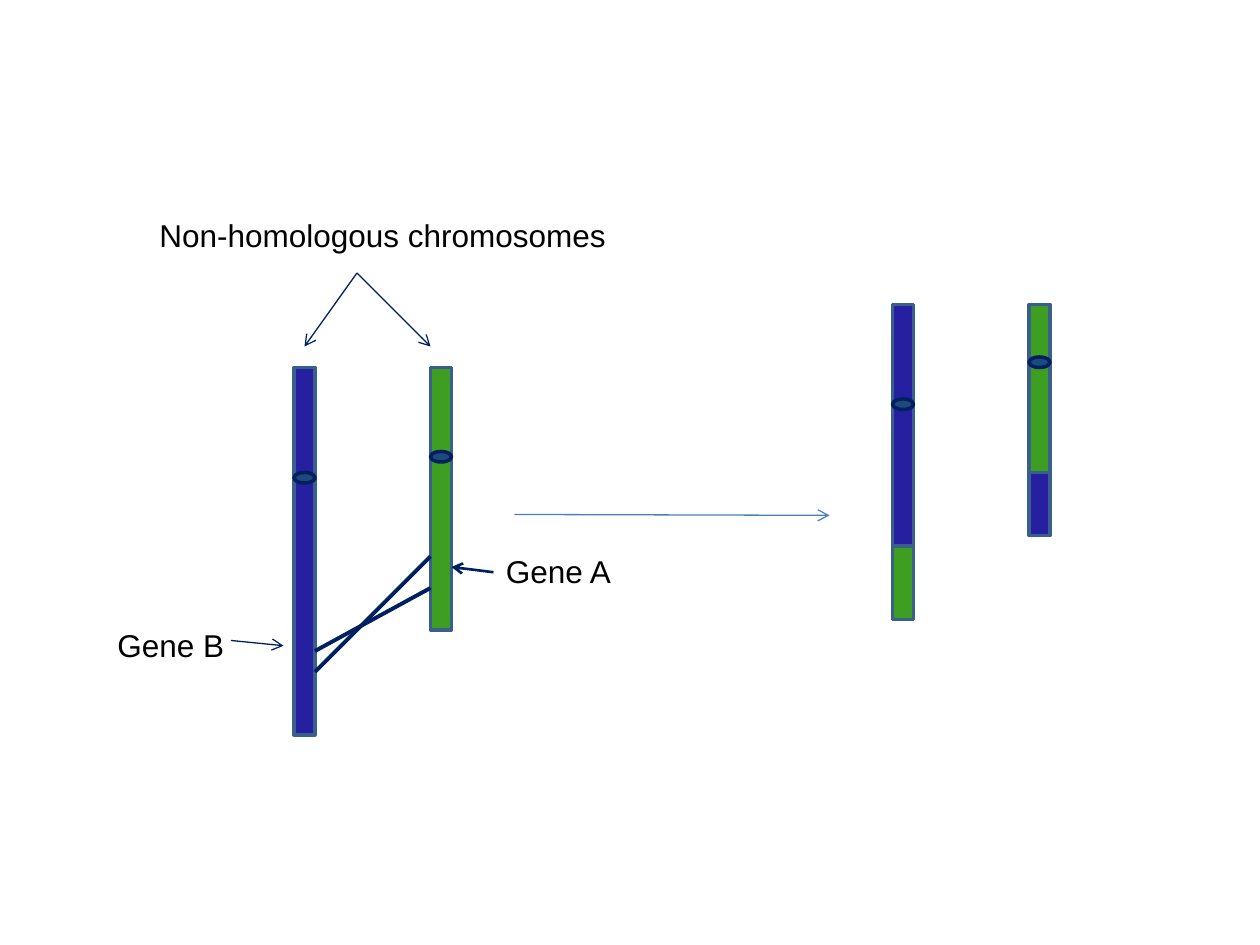
from lxml import etree
from pptx import Presentation
from pptx.dml.color import RGBColor
from pptx.enum import shapes, text
from pptx.oxml import ns
from pptx.util import Pt

BLUE = RGBColor(0x26, 0x20, 0xA0)
GREEN = RGBColor(0x3D, 0x9E, 0x22)
OUTLINE = RGBColor(0x3A, 0x5F, 0x8C)
NAVY = RGBColor(0x00, 0x20, 0x60)
CENTROMERE = RGBColor(0x1F, 0x49, 0x7D)
ARROW_BLUE = RGBColor(0x4B, 0x7E, 0xBC)
BLACK = RGBColor(0, 0, 0)

WIDTH = 12             # chromosome width
CENTROMERE_HEIGHT = 6

# Chromosomes: left, top, centromere top, segments (colour, length)
CHROMOSOMES = [
    (168, 210, 270, [(BLUE, 210)]),
    (246, 210, 258, [(GREEN, 150)]),
    (510, 174, 228, [(BLUE, 138), (GREEN, 42)]),
    (588, 174, 204, [(GREEN, 96), (BLUE, 36)]),
]

# Lines: start, end, colour, weight, arrowhead
LINES = [
    ((294, 294), (474, 294.5), ARROW_BLUE, 0.75, True),  # translocation
    ((180, 384), (246, 318), NAVY, 2.25, False),         # crossing strands
    ((180, 372), (246, 336), NAVY, 2.25, False),
    ((132, 366), (162, 369), NAVY, 0.75, True),          # gene pointers
    ((282, 327), (258, 324), NAVY, 1.5, True),
    ((204, 156), (174, 198), NAVY, 0.75, True),          # chromosome pointers
    ((204, 156), (246, 198), NAVY, 0.75, True),
]

# Labels: wording, left, top, width, height
LABELS = [
    ("Gene B", 60, 354, 102, 30),
    ("Gene A", 282, 312, 102, 30),
    ("Non-homologous chromosomes", 84, 120, 270, 29),
]


def add_part(page, kind, left, top, height, fill, line):
    part = page.shapes.add_shape(kind, Pt(left), Pt(top), Pt(WIDTH), Pt(height))
    part.shadow.inherit = False
    part.fill.solid()
    part.fill.fore_color.rgb = fill
    part.line.color.rgb = line
    part.line.width = Pt(2)


def add_chromosome(page, left, top, centromere_top, segments):
    for colour, length in segments:
        add_part(page, shapes.MSO_SHAPE.RECTANGLE, left, top, length, colour, OUTLINE)
        top += length
    add_part(page, shapes.MSO_SHAPE.OVAL, left, centromere_top,
             CENTROMERE_HEIGHT, CENTROMERE, NAVY)


def add_line(page, start, end, colour, weight, arrowhead):
    line = page.shapes.add_connector(shapes.MSO_CONNECTOR.STRAIGHT,
                                     *map(Pt, start + end))
    line.line.color.rgb = colour
    line.line.width = Pt(weight)
    properties = line._element.spPr
    if arrowhead:
        outline = properties.find(ns.qn("a:ln"))
        etree.SubElement(outline, ns.qn("a:tailEnd"), type="arrow")
    etree.SubElement(properties, ns.qn("a:effectLst"))


def add_label(page, wording, *place):
    box = page.shapes.add_textbox(*map(Pt, place))
    frame = box.text_frame
    frame.word_wrap = True
    frame.auto_size = text.MSO_AUTO_SIZE.SHAPE_TO_FIT_TEXT
    span = frame.paragraphs[0].add_run()
    span.text = wording
    span.font.name = "Arial"
    span.font.size = Pt(18)
    span.font.color.rgb = BLACK


def main():
    deck = Presentation()
    deck.slide_width, deck.slide_height = Pt(720), Pt(540)
    page = deck.slides.add_slide(deck.slide_layouts[6])

    for chromosome in CHROMOSOMES:
        add_chromosome(page, *chromosome)
    for line in LINES:
        add_line(page, *line)
    for label in LABELS:
        add_label(page, *label)

    deck.save("out.pptx")


if __name__ == "__main__":
    main()
